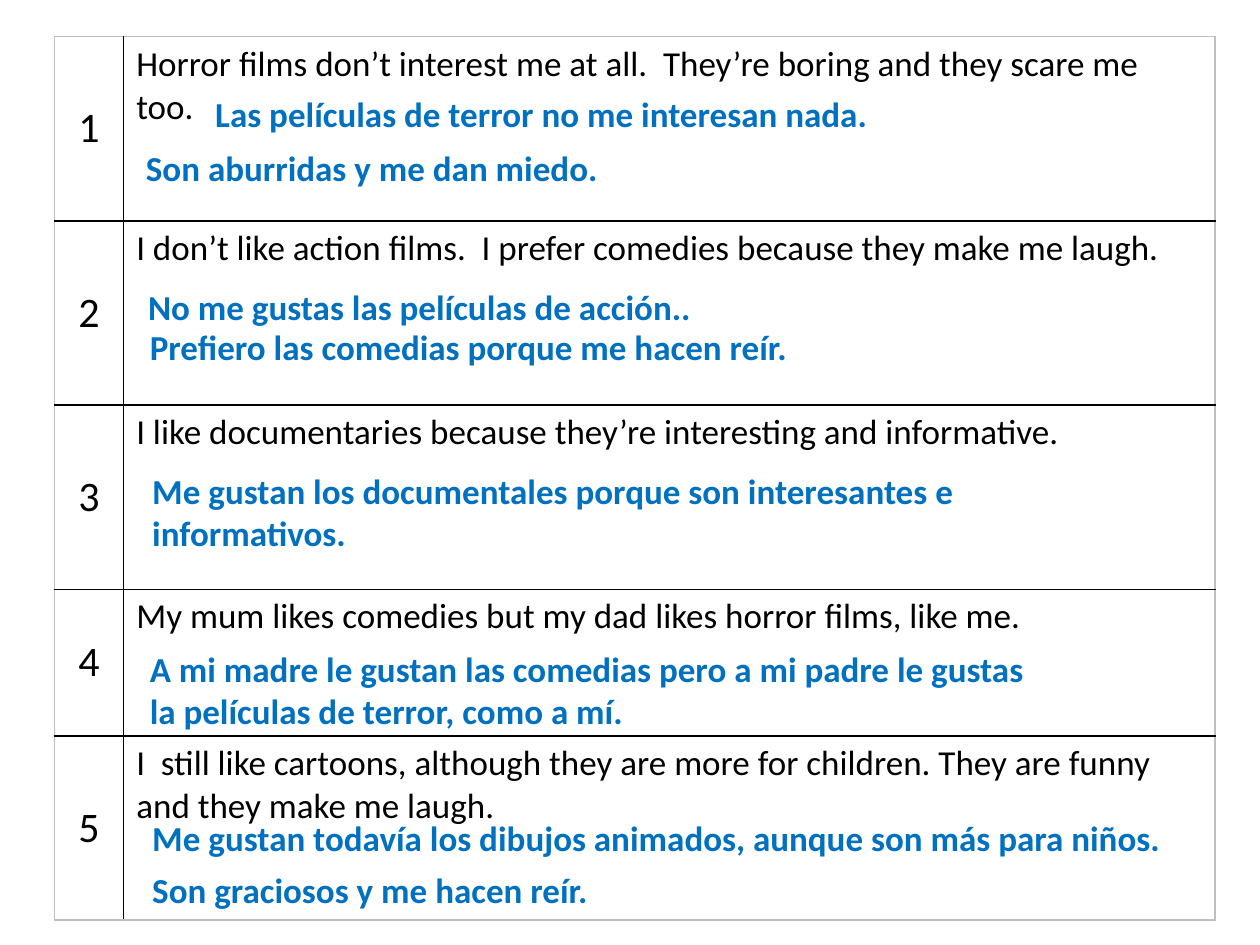
import pptx
import pptx.dml.color
import pptx.enum.text
import pptx.oxml
import pptx.oxml.ns
import pptx.util
from pptx.util import Pt

BLACK = pptx.dml.color.RGBColor(0x00, 0x00, 0x00)
GREY = pptx.dml.color.RGBColor(0xBF, 0xBF, 0xBF)
BLUE = pptx.dml.color.RGBColor(0x00, 0x70, 0xC0)
FONT = "Calibri"

TABLE_LEFT, TABLE_TOP = 31, 20.9
COLUMN_WIDTHS = [39.7, 623.5]
TALL_ROW, SHORT_ROW = 105.3, 83.8

# English sentence, row height
SENTENCES = [
    ("Horror films don’t interest me at all.  They’re boring and they scare me too.", TALL_ROW),
    ("I don’t like action films.  I prefer comedies because they make me laugh.", TALL_ROW),
    ("I like documentaries because they’re interesting and informative.", TALL_ROW),
    ("My mum likes comedies but my dad likes horror films, like me.", SHORT_ROW),
    ("I  still like cartoons, although they are more for children. "
     "They are funny and they make me laugh.", TALL_ROW),
]

ANSWER_WIDTH, WIDE_ANSWER = 521.6, 603.4
ONE_LINE, TWO_LINES = 31.5, 55.7

# Spanish answer, left, top, width, height
ANSWERS = [
    ("Las películas de terror no me interesan nada.", 115.9, 49.1, ANSWER_WIDTH, ONE_LINE),
    ("Son aburridas y me dan miedo.", 76.3, 79.9, ANSWER_WIDTH, ONE_LINE),
    ("No me gustas las películas de acción..", 77.5, 159.3, ANSWER_WIDTH, ONE_LINE),
    ("Prefiero las comedias porque me hacen reír.", 78.5, 182.5, ANSWER_WIDTH, ONE_LINE),
    ("Me gustan los documentales porque son interesantes e informativos.",
     79.9, 264.5, ANSWER_WIDTH, TWO_LINES),
    ("A mi madre le gustan las comedias pero a mi padre le gustas "
     "la películas de terror, como a mí.", 78.5, 366.7, ANSWER_WIDTH, TWO_LINES),
    ("Me gustan todavía los dibujos animados, aunque son más para niños.",
     79.9, 463.2, WIDE_ANSWER, ONE_LINE),
    ("Son graciosos y me hacen reír.", 79.9, 492.7, ANSWER_WIDTH, ONE_LINE),
]


def add_run(paragraph, text, size, color, bold=False):
    run = paragraph.add_run()
    run.text = text
    run.font.name = FONT
    run.font.size = Pt(size)
    run.font.bold = bold
    run.font.color.rgb = color


def set_borders(cell, colors):
    """Draw the left, right, top and bottom borders, which must precede the fill."""
    properties = cell._tc.get_or_add_tcPr()
    for index, (side, color) in enumerate(zip("LRTB", colors)):
        properties.insert(index, pptx.oxml.parse_xml(
            f'<a:ln{side} {pptx.oxml.ns.nsdecls("a")} w="{Pt(1)}"><a:solidFill>'
            f'<a:srgbClr val="{color}"/></a:solidFill></a:ln{side}>'))


def fill_cell(cell, text, size, is_number):
    cell.fill.background()
    paragraph = cell.text_frame.paragraphs[0]
    if is_number:
        cell.vertical_anchor = pptx.enum.text.MSO_ANCHOR.MIDDLE
        paragraph.alignment = pptx.enum.text.PP_ALIGN.CENTER
    add_run(paragraph, text, size, BLACK)


def add_sentence_table(slide):
    heights = [height for _, height in SENTENCES]
    table = slide.shapes.add_table(
        len(SENTENCES), len(COLUMN_WIDTHS), Pt(TABLE_LEFT), Pt(TABLE_TOP),
        Pt(sum(COLUMN_WIDTHS)), Pt(sum(heights))).table
    table.first_row = False
    table.horz_banding = False
    for column, width in zip(table.columns, COLUMN_WIDTHS):
        column.width = Pt(width)
    last = len(SENTENCES) - 1
    for index, (sentence, height) in enumerate(SENTENCES):
        table.rows[index].height = Pt(height)
        number_cell, sentence_cell = table.rows[index].cells
        fill_cell(number_cell, str(index + 1), 24, True)
        fill_cell(sentence_cell, sentence, 20, False)
        top = GREY if index == 0 else BLACK
        bottom = GREY if index == last else BLACK
        set_borders(number_cell, (GREY, BLACK, top, bottom))
        set_borders(sentence_cell, (BLACK, GREY, top, bottom))


def add_answer(slide, text, left, top, width, height):
    shape = slide.shapes.add_textbox(Pt(left), Pt(top), Pt(width), Pt(height))
    frame = shape.text_frame
    frame.word_wrap = True
    frame.auto_size = pptx.enum.text.MSO_AUTO_SIZE.SHAPE_TO_FIT_TEXT
    add_run(frame.paragraphs[0], text, 20, BLUE, bold=True)


def main():
    presentation = pptx.Presentation()
    presentation.slide_width = Pt(720)
    presentation.slide_height = Pt(540)
    slide = presentation.slides.add_slide(presentation.slide_layouts[6])
    add_sentence_table(slide)
    for answer in ANSWERS:
        add_answer(slide, *answer)
    presentation.save("out.pptx")


if __name__ == "__main__":
    main()
